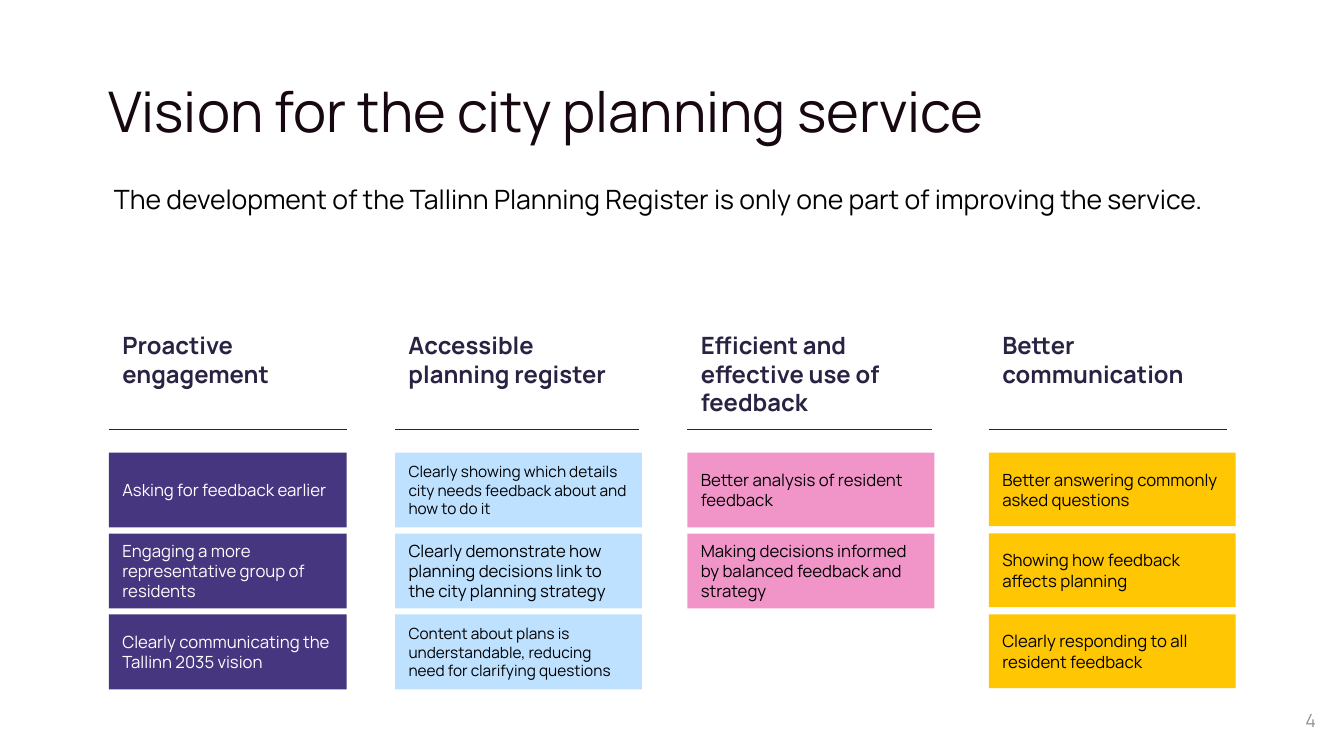
"""Builds the slide on the vision for the city planning service."""
from lxml import etree
from pptx import Presentation
from pptx.dml.color import RGBColor
from pptx.enum import shapes, text
from pptx.oxml.ns import qn
from pptx.util import Pt

INK = RGBColor(0x2A, 0x22, 0x42)
TITLE = RGBColor(0x17, 0x07, 0x10)
GREY = RGBColor(0x8B, 0x96, 0x99)
BLACK = RGBColor(0, 0, 0)
WHITE = RGBColor(0xFF, 0xFF, 0xFF)
PURPLE = RGBColor(0x46, 0x36, 0x7F)
BLUE = RGBColor(0xBE, 0xE1, 0xFF)
PINK = RGBColor(0xE5, 0x30, 0x94)
YELLOW = RGBColor(0xFF, 0xC6, 0x03)
TOP, MIDDLE = text.MSO_ANCHOR.TOP, text.MSO_ANCHOR.MIDDLE
LEFT, RIGHT = text.PP_ALIGN.LEFT, text.PP_ALIGN.RIGHT
INSET = 9.6
HEADING_TOP, RULE_TOP, CARD_TOP, CARD_PITCH = 226.8, 306.7, 323.3, 57.8


def write(sp, words, size, color, inset=(0, 0), anchor=TOP, align=LEFT, bold=False):
    tf = sp.text_frame
    tf.word_wrap = True
    tf.vertical_anchor = anchor
    tf.margin_left = tf.margin_right = Pt(inset[0])
    tf.margin_top = tf.margin_bottom = Pt(inset[1])
    p = tf.paragraphs[0]
    p.text = words
    p.alignment = align
    p.font.name = "Manrope"
    p.font.size = Pt(size)
    p.font.bold = bold
    p.font.color.rgb = color


def add_text(x, y, w, h, *args, **style):
    write(s.shapes.add_textbox(Pt(x), Pt(y), Pt(w), Pt(h)), *args, **style)


prs = Presentation()
prs.slide_width, prs.slide_height = Pt(960), Pt(540)
s = prs.slides.add_slide(prs.slide_layouts[6])

add_text(77.8, 41.8, 862.6, 74.2, "Vision for the city planning service", 40, TITLE, anchor=MIDDLE)
add_text(81.4, 131, 807.1, 74.2,
         "The development of the Tallinn Planning Register is only one part of improving the service.",
         19, BLACK)
add_text(650.9, 495.4, 298.8, 38.2, "4", 13, GREY, inset=(INSET, 5), anchor=MIDDLE, align=RIGHT)

columns = [
    ("Proactive engagement", 77.8, 172.1, 169.9, 169.9, 53.5, PURPLE, WHITE, [
        ("Asking for feedback earlier", 12),
        ("Engaging a more representative group of residents", 12),
        ("Clearly communicating the Tallinn 2035 vision", 12)]),
    ("Accessible planning register", 282.2, 182.9, 174.2, 176.4, 53.5, BLUE, BLACK, [
        ("Clearly showing which details city needs feedback about and how to do it", 11),
        ("Clearly demonstrate how planning decisions link to the city planning strategy", 12),
        ("Content about plans is understandable, reducing need for clarifying questions", 11)]),
    ("Efficient and effective use of feedback", 491, 182.9, 175, 176.4, 53.5, PINK, BLACK, [
        ("Better analysis of resident feedback", 12),
        ("Making decisions informed by balanced feedback and strategy", 12)]),
    ("Better communication", 706.3, 172.1, 169.9, 176.4, 52.6, YELLOW, BLACK, [
        ("Better answering commonly asked questions", 12),
        ("Showing how feedback affects planning", 12),
        ("Clearly responding to all resident feedback", 12)]),
]

for heading, x, heading_w, rule_w, card_w, card_h, fill, ink, cards in columns:
    add_text(x, HEADING_TOP, heading_w, 31, heading, 17, INK, inset=(INSET, INSET), bold=True)

    rule = s.shapes.add_connector(shapes.MSO_CONNECTOR.STRAIGHT,
                                  Pt(x), Pt(RULE_TOP), Pt(x + rule_w), Pt(RULE_TOP))
    rule.line.color.rgb = INK
    rule.line.width = Pt(0.75)
    etree.SubElement(rule._element.spPr, qn("a:effectLst"))

    for row, (words, size) in enumerate(cards):
        card = s.shapes.add_shape(shapes.MSO_SHAPE.RECTANGLE, Pt(x), Pt(CARD_TOP + row * CARD_PITCH),
                                  Pt(card_w), Pt(card_h))
        card.shadow.inherit = False
        card.line.fill.background()
        card.fill.solid()
        card.fill.fore_color.rgb = fill
        if fill == PINK:
            color = card._element.spPr.find(qn("a:solidFill"))[0]
            etree.SubElement(color, qn("a:alpha"), val="51000")
        write(card, words, size, ink, inset=(INSET, INSET), anchor=MIDDLE)

prs.save("out.pptx")
